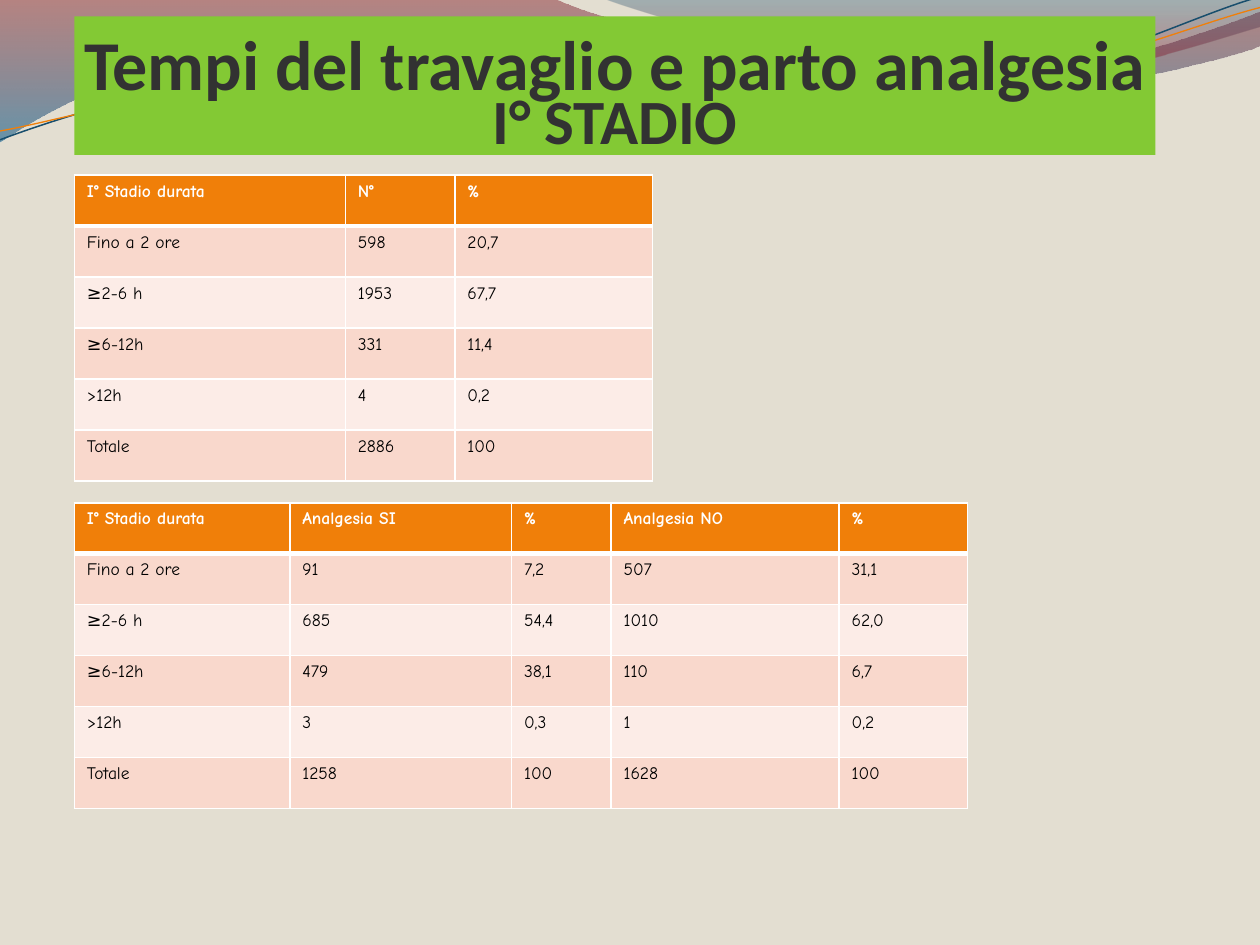
from lxml import etree
from pptx import Presentation
from pptx import util as u
from pptx.dml.color import RGBColor
from pptx.enum import text
from pptx.oxml.ns import qn

ORANGE, GREEN, WHITE, BLACK, DARK = "F07F09", "83C934", "FFFFFF", "000000", "323232"
BANDS = ("F9D8CC", "FCECE7")
LEFT = 0.59
ROW_HEIGHT = 0.405


def color(hex_value):
    return RGBColor.from_string(hex_value)


def write(paragraph, content, size=10, font="Comic Neue", fill=BLACK, bold=False,
          align=None, spacing=None):
    paragraph.alignment = align
    paragraph.line_spacing = spacing
    run = paragraph.add_run()
    run.text = content
    run.font.size = u.Pt(size)
    run.font.name = font
    run.font.bold = bold
    run.font.color.rgb = color(fill)


def set_border(cell, side, width):
    properties = cell._tc.get_or_add_tcPr()
    line = etree.SubElement(properties, qn(f"a:ln{side}"), w=str(u.Pt(width)))
    solid = etree.SubElement(line, qn("a:solidFill"))
    etree.SubElement(solid, qn("a:srgbClr"), val=WHITE)


class SlideBuilder:
    def __init__(self, slide, background):
        self.slide = slide
        slide.background.fill.solid()
        slide.background.fill.fore_color.rgb = color(background)

    def outline(self, start, segments, closed):
        """Each segment is one point for a line or three for a cubic curve."""
        points = [(u.Inches(x), u.Inches(y)) for segment in segments for x, y in segment]
        builder = self.slide.shapes.build_freeform(u.Inches(start[0]), u.Inches(start[1]))
        builder.add_line_segments(points, close=closed)
        shape = builder.convert_to_shape()
        shape.shadow.inherit = False
        # Merge the three steps of each curve into one cubic element
        steps = iter(shape.element.spPr.findall(".//" + qn("a:lnTo")))
        for segment in segments:
            first, *others = [next(steps) for _ in segment]
            if others:
                first.tag = qn("a:cubicBezTo")
                for step in others:
                    first.append(step[0])
                    step.getparent().remove(step)
        return shape

    def wave(self, start, segments, stops):
        """Filled wave; each stop is (position, colour, opacity)."""
        shape = self.outline(start, segments, True)
        shape.line.fill.background()
        shape.fill.gradient()
        shape.fill.gradient_angle = 270
        for stop, (position, hex_value, _) in zip(shape.fill.gradient_stops, stops):
            stop.position = position
            stop.color.rgb = color(hex_value)
        tints = shape.element.spPr.findall(".//" + qn("a:gs") + "/" + qn("a:srgbClr"))
        for tint, (_, _, opacity) in zip(tints, stops):
            etree.SubElement(tint, qn("a:alpha"), val=str(opacity * 1000))

    def curve(self, start, segments, hex_value, width):
        shape = self.outline(start, segments, False)
        shape.fill.background()
        shape.line.color.rgb = color(hex_value)
        shape.line.width = u.Pt(width)

    def title(self, lines, left, top, width, height):
        shape = self.slide.shapes.title
        shape.left, shape.top = u.Inches(left), u.Inches(top)
        shape.width, shape.height = u.Inches(width), u.Inches(height)
        shape.fill.solid()
        shape.fill.fore_color.rgb = color(GREEN)
        frame = shape.text_frame
        frame.auto_size = text.MSO_AUTO_SIZE.NONE
        frame.word_wrap = True
        frame.vertical_anchor = text.MSO_ANCHOR.BOTTOM
        frame.margin_left = frame.margin_right = frame.margin_bottom = 0
        frame.margin_top = u.Inches(0.05)
        for i, (content, size) in enumerate(lines):
            paragraph = frame.add_paragraph() if i else frame.paragraphs[0]
            write(paragraph, content, size=size, font="Calibri", fill=DARK, bold=True,
                  align=text.PP_ALIGN.CENTER, spacing=0.7)
        # Bring the title in front of the waves
        shape.element.getparent().append(shape.element)

    def table(self, top, widths, rows):
        table = self.slide.shapes.add_table(
            len(rows), len(widths), u.Inches(LEFT), u.Inches(top),
            u.Inches(sum(widths)), u.Inches(ROW_HEIGHT * len(rows))).table
        table.horz_banding = False
        for column, width in zip(table.columns, widths):
            column.width = u.Inches(width)
        for r, values in enumerate(rows):
            table.rows[r].height = u.Inches(ROW_HEIGHT)
            header = r == 0
            for c, value in enumerate(values):
                cell = table.cell(r, c)
                for side in "LRTB":
                    thick = (r, side) in ((0, "B"), (1, "T"))
                    set_border(cell, side, 3 if thick else 1)
                cell.fill.solid()
                cell.fill.fore_color.rgb = color(ORANGE if header else BANDS[(r - 1) % 2])
                write(cell.text_frame.paragraphs[0], value,
                      fill=WHITE if header else BLACK, bold=header)


def main():
    presentation = Presentation()
    presentation.slide_width, presentation.slide_height = u.Inches(10), u.Inches(7.5)
    slide = presentation.slides.add_slide(presentation.slide_layouts[5])
    builder = SlideBuilder(slide, "E3DED1")

    # Waves along the top edge
    builder.wave((0, -0.01), [
        [(4.4, -0.01)],
        [(4.76, 0.17), (6.64, 0.63), (7.58, 0.63)],
        [(8.53, 0.63), (9.58, 0.26), (10, 0.09)],
        [(10.01, 0.36)],
        [(9.83, 0.44), (8.7, 0.76), (7.46, 0.75)],
        [(6.22, 0.75), (3.82, 0.28), (2.57, 0.34)],
        [(1.29, 0.35), (0.46, 0.83), (-0.01, 1.13)],
    ], [(0, "7E1621", 45), (1, "005689", 55)])
    builder.wave((4.79, -0.01), [
        [(5.09, 0.11), (6.82, 0.62), (7.69, 0.65)],
        [(8.56, 0.69), (9.61, 0.32), (10, 0.21)],
        [(10, 0)],
    ], [(0, "094467", 30), (0.8, "A10F1F", 45)])

    # Thin curves
    builder.curve((0, 1.11), [
        [(0.48, 0.93), (1.58, 0.57), (2.77, 0.52)],
        [(3.95, 0.47), (5.93, 0.89), (7.13, 0.8)],
        [(8.33, 0.71), (9.38, 0.15), (9.98, -0.02)],
    ], "184E6D", 0.85)
    builder.curve((0, 1.04), [
        [(0.47, 0.96), (1.64, 0.61), (2.83, 0.56)],
        [(4.03, 0.51), (5.97, 0.83), (7.17, 0.75)],
        [(8.36, 0.67), (9.41, 0.21), (10, 0.06)],
    ], ORANGE, 0.75)

    # Title
    builder.title([("Tempi del travaglio e parto analgesia", 40), ("I° STADIO", 36)],
                  LEFT, 0.13, 8.58, 1.1)

    # Duration of the first stage, overall and by analgesia
    durations = ["I° Stadio durata", "Fino a 2 ore", "≥2-6 h", "≥6-12h", ">12h", "Totale"]
    overall = [
        ["N°", "598", "1953", "331", "4", "2886"],
        ["%", "20,7", "67,7", "11,4", "0,2", "100"],
    ]
    by_analgesia = [
        ["Analgesia SI", "91", "685", "479", "3", "1258"],
        ["%", "7,2", "54,4", "38,1", "0,3", "100"],
        ["Analgesia NO", "507", "1010", "110", "1", "1628"],
        ["%", "31,1", "62,0", "6,7", "0,2", "100"],
    ]
    builder.table(1.39, [2.15, 0.87, 1.57], list(zip(durations, *overall)))
    builder.table(3.99, [1.71, 1.76, 0.79, 1.81, 1.02], list(zip(durations, *by_analgesia)))

    presentation.save("out.pptx")


if __name__ == "__main__":
    main()
